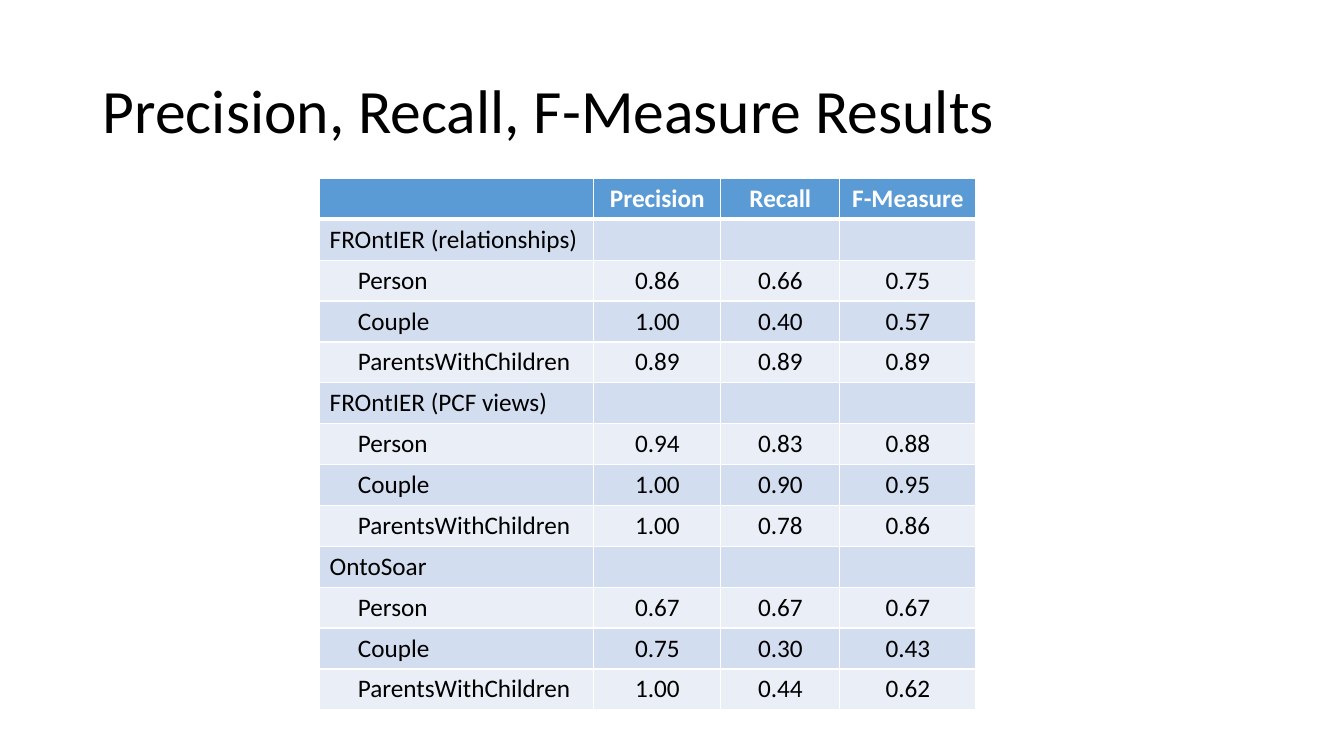
from dataclasses import dataclass

from lxml.etree import SubElement as Sub
from pptx import Presentation
from pptx.dml.color import RGBColor as RGB
from pptx.enum.text import MSO_ANCHOR as Anchor, PP_ALIGN as Align
from pptx.oxml.ns import qn
from pptx.util import Inches, Pt


@dataclass(frozen=True)
class Theme:
    font: str = "Calibri"
    ink: str = "000000"
    paper: str = "FFFFFF"
    head: str = "5B9BD5"
    bands: tuple = ("EAEFF7", "D2DEEF")
    title: int = 44
    body: int = 18
    thin: int = 1
    thick: int = 3


class Deck:
    """Holds the theme and the current slide, and draws each kind of element."""

    def __init__(self, theme):
        self.theme = theme
        self.file = Presentation()
        self.file.slide_width = Inches(13.33)
        self.file.slide_height = Inches(7.5)
        self.slide = self.file.slides.add_slide(self.file.slide_layouts[5])

    def style(self, para, size, color, bold=False):
        for run in para.runs:
            font = run.font
            font.name = self.theme.font
            font.size = Pt(size)
            font.bold = bold
            font.color.rgb = RGB.from_string(color)

    def title(self, text, left, top, width, height):
        box = self.slide.shapes.title
        box.left, box.top = Inches(left), Inches(top)
        box.width, box.height = Inches(width), Inches(height)
        frame = box.text_frame
        frame.text = text
        frame.word_wrap = True
        frame.vertical_anchor = Anchor.MIDDLE
        para = frame.paragraphs[0]
        para.alignment = Align.LEFT
        para.line_spacing = 0.9
        self.style(para, self.theme.title, self.theme.ink)

    def border(self, cell, row):
        props = cell._tc.get_or_add_tcPr()
        heavy = {0: "lnB", 1: "lnT"}.get(row)
        for side in ("lnL", "lnR", "lnT", "lnB"):
            width = self.theme.thick if side == heavy else self.theme.thin
            line = Sub(props, qn(f"a:{side}"), w=str(Pt(width)))
            fill = Sub(line, qn("a:solidFill"))
            Sub(fill, qn("a:srgbClr"), val=self.theme.paper)

    def cell(self, cell, text, row, col, inset):
        theme, head = self.theme, row == 0
        self.border(cell, row)
        cell.fill.solid()
        fill = theme.head if head else theme.bands[row % 2]
        cell.fill.fore_color.rgb = RGB.from_string(fill)
        cell.margin_left = Inches(inset)
        cell.text_frame.text = text
        para = cell.text_frame.paragraphs[0]
        para.alignment = Align.CENTER if col else Align.LEFT
        self.style(para, theme.body, theme.paper if head else theme.ink, head)

    def table(self, rows, left, top, widths, step, indent):
        frame = self.slide.shapes.add_table(
            len(rows), len(widths), Inches(left), Inches(top),
            Inches(sum(widths)), Inches(step * len(rows)))
        grid = frame.table
        for col, width in zip(grid.columns, widths):
            col.width = Inches(width)
        for i, row in enumerate(rows):
            grid.rows[i].height = Inches(step)
            for j, text in enumerate(row):
                inset = indent if j == 0 and row[1] else 0.1
                self.cell(grid.cell(i, j), text, i, j, inset)

    def save(self):
        self.file.save("out.pptx")


HEAD = ("", "Precision", "Recall", "F-Measure")
KINDS = ("Person", "Couple", "ParentsWithChildren")
SCORES = {
    "FROntIER (relationships)": (
        ("0.86", "0.66", "0.75"),
        ("1.00", "0.40", "0.57"),
        ("0.89", "0.89", "0.89")),
    "FROntIER (PCF views)": (
        ("0.94", "0.83", "0.88"),
        ("1.00", "0.90", "0.95"),
        ("1.00", "0.78", "0.86")),
    "OntoSoar": (
        ("0.67", "0.67", "0.67"),
        ("0.75", "0.30", "0.43"),
        ("1.00", "0.44", "0.62")),
}


def main():
    rows = [HEAD]
    for system, scores in SCORES.items():
        rows.append((system, "", "", ""))
        rows += [(kind, *score) for kind, score in zip(KINDS, scores)]
    deck = Deck(Theme())
    deck.title("Precision, Recall, F-Measure Results", 0.92, 0.4, 11.5, 1.45)
    deck.table(rows, 3.17, 1.77, (2.72, 1.26, 1.18, 1.35), 5.27 / len(rows), 0.38)
    deck.save()


if __name__ == "__main__":
    main()
